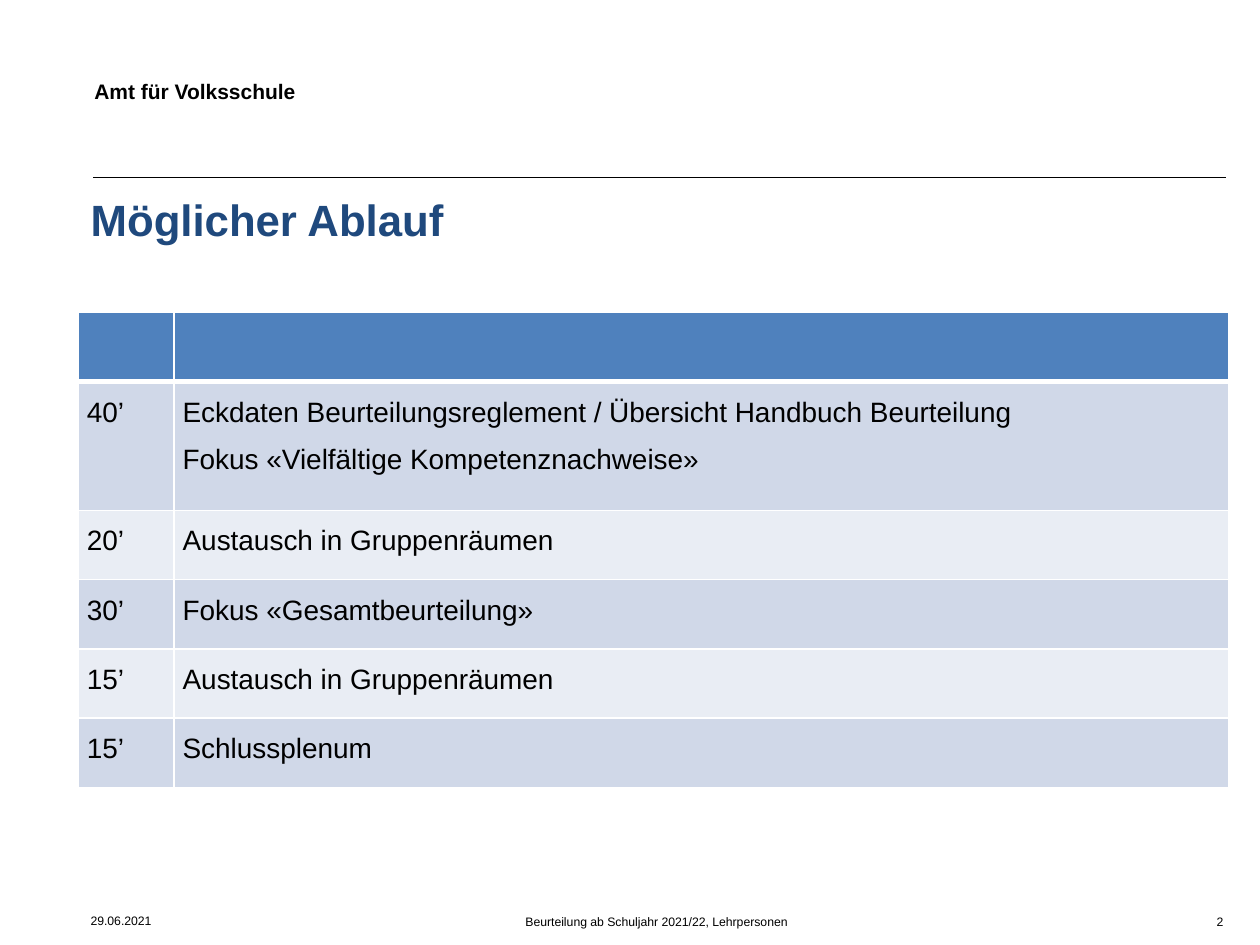
from lxml import etree
from pptx import Presentation
from pptx.dml.color import RGBColor
from pptx.enum.shapes import MSO_CONNECTOR
from pptx.enum.text import MSO_ANCHOR, PP_ALIGN
from pptx.oxml.ns import qn
from pptx.util import Inches, Pt

LEFT, CENTER, RIGHT = PP_ALIGN.LEFT, PP_ALIGN.CENTER, PP_ALIGN.RIGHT
TOP = MSO_ANCHOR.TOP
STRAIGHT = MSO_CONNECTOR.STRAIGHT
BLACK = RGBColor(0x00, 0x00, 0x00)
WHITE = RGBColor(0xFF, 0xFF, 0xFF)
NAVY = RGBColor(0x1F, 0x49, 0x7D)
BLUE = RGBColor(0x4F, 0x81, 0xBD)
BANDS = RGBColor(0xD0, 0xD8, 0xE8), RGBColor(0xE9, 0xED, 0xF4)

AGENDA = [
    ("40’", ["Eckdaten Beurteilungsreglement / Übersicht Handbuch Beurteilung",
             "Fokus «Vielfältige Kompetenznachweise»"]),
    ("20’", ["Austausch in Gruppenräumen"]),
    ("30’", ["Fokus «Gesamtbeurteilung»"]),
    ("15’", ["Austausch in Gruppenräumen"]),
    ("15’", ["Schlussplenum"]),
]
WIDTHS = 0.76, 8.37
FOOTER = [
    ("29.06.2021", 0.62, 6.91, 2.08, LEFT, 0.1),
    ("Beurteilung ab Schuljahr 2021/22, Lehrpersonen", 3.17, 6.92, 4.08, CENTER, 0.1),
    ("2", 7.67, 6.92, 2.08, RIGHT, 0.04),
]


class Page:
    font = "Arial"

    def __init__(self, deck):
        self.slide = deck.slides.add_slide(deck.slide_layouts[5])
        self.shapes = self.slide.shapes

    def put(self, frame, lines, size, color=BLACK, bold=False, align=LEFT, space=None):
        for i, line in enumerate(lines):
            para = frame.add_paragraph() if i else frame.paragraphs[0]
            para.alignment = align
            para.line_spacing = space
            run = para.add_run()
            run.text = line
            run.font.name = self.font
            run.font.size = Pt(size)
            run.font.bold = bold
            run.font.color.rgb = color

    def title(self, text, x, y, w, h):
        box = self.shapes.title
        box.left, box.top, box.width, box.height = map(Inches, (x, y, w, h))
        box.text_frame.vertical_anchor = TOP
        self.put(box.text_frame, [text], 25, NAVY, True, space=Pt(29))

    def text(self, text, x, y, w, h, size, space, bold=False, align=LEFT, inset=0.1):
        frame = self.shapes.add_textbox(*map(Inches, (x, y, w, h))).text_frame
        frame.word_wrap = True
        frame.vertical_anchor = TOP
        frame.margin_right = Inches(inset)
        self.put(frame, [text], size, bold=bold, align=align, space=Pt(space))

    def rule(self, x, y, end):
        line = self.shapes.add_connector(STRAIGHT, Inches(x), Inches(y), Inches(end), Inches(y))
        line.line.color.rgb = BLACK
        line.line.width = Pt(0.75)
        etree.SubElement(line._element.spPr, qn("a:effectLst"))

    def cell(self, cell, lines, fill, base=1):
        cell.margin_left = cell.margin_right = Inches(0.07)
        cell.margin_top = cell.margin_bottom = 0
        cell.vertical_anchor = TOP
        self.put(cell.text_frame, lines, 16, space=1.5)
        props = cell._tc.get_or_add_tcPr()
        for side, width in (("L", 1), ("R", 1), ("T", 1), ("B", base)):
            edge = etree.SubElement(props, qn(f"a:ln{side}"), w=str(Pt(width)))
            paint = etree.SubElement(edge, qn("a:solidFill"))
            etree.SubElement(paint, qn("a:srgbClr"), val=str(WHITE))
        cell.fill.solid()
        cell.fill.fore_color.rgb = fill

    def table(self, rows, x, y):
        heights = [0.55] + [1.02 if len(lines) > 1 else 0.55 for _, lines in rows]
        size = map(Inches, (x, y, sum(WIDTHS), sum(heights)))
        grid = self.shapes.add_table(len(heights), len(WIDTHS), *size).table
        for col, width in zip(grid.columns, WIDTHS):
            col.width = Inches(width)
        for row, height in zip(grid.rows, heights):
            row.height = Inches(height)
        for cell in grid.rows[0].cells:
            self.cell(cell, [], BLUE, 3)
        for i, (time, lines) in enumerate(rows):
            fill = BANDS[i % 2]
            self.cell(grid.cell(i + 1, 0), [time], fill)
            self.cell(grid.cell(i + 1, 1), lines, fill)


def main():
    deck = Presentation()
    deck.slide_width, deck.slide_height = Inches(10), Inches(7.5)
    page = Page(deck)
    page.rule(0.74, 1.41, 9.73)
    page.text("Amt für Volksschule", 0.65, 0.58, 3.94, 0.32, 12, 14, True)
    page.title("Möglicher Ablauf", 0.62, 1.49, 9.13, 0.94)
    page.table(AGENDA, 0.62, 2.48)
    for text, x, y, w, align, inset in FOOTER:
        page.text(text, x, y, w, 0.34, 7, 29, align=align, inset=inset)
    deck.save("out.pptx")


if __name__ == "__main__":
    main()
